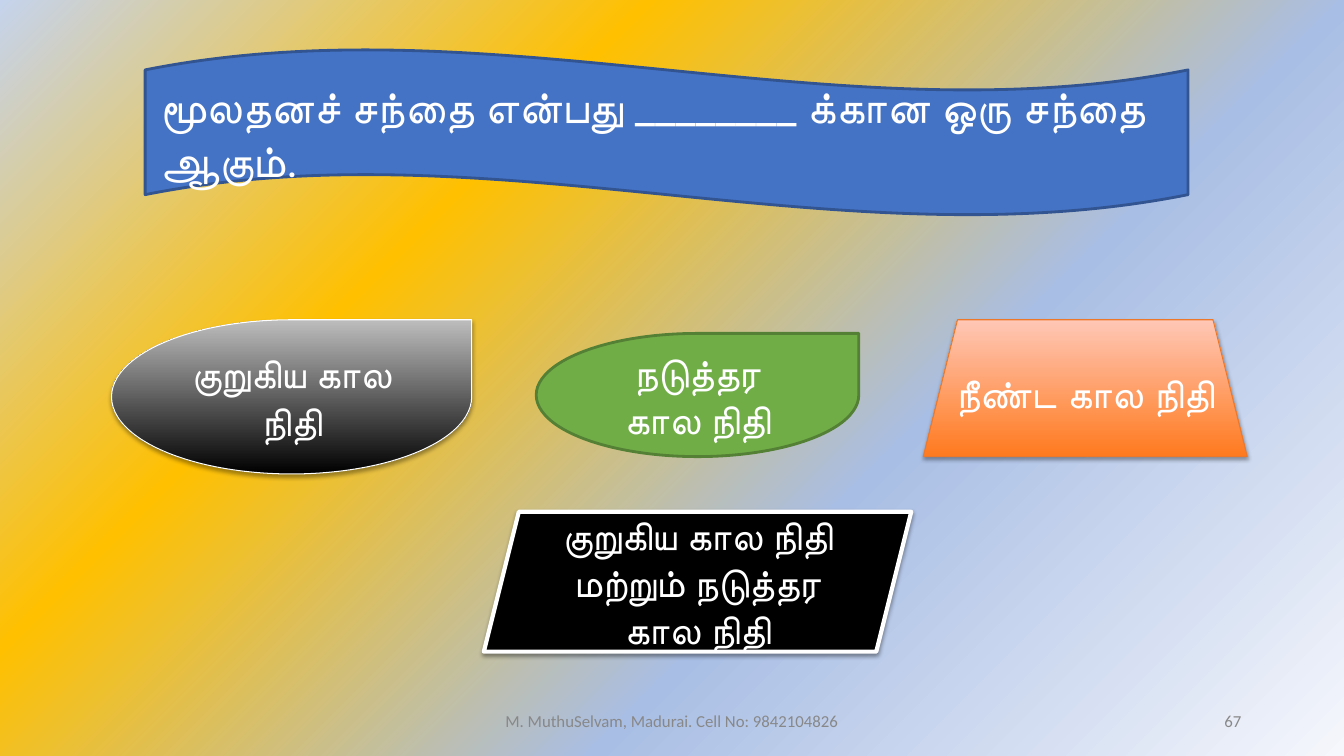
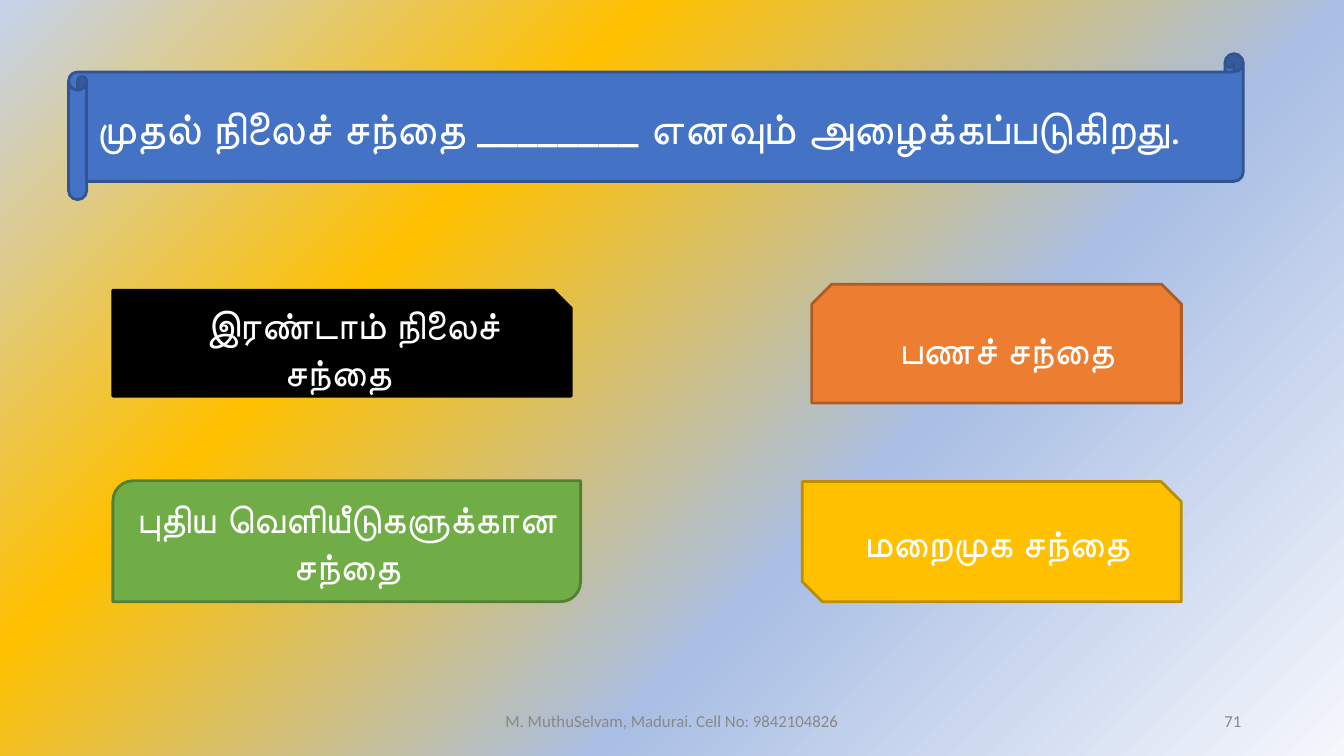
"""Build two quiz slides: a question on a banner above four answer shapes."""
import pptx
import pptx.dml.color
import pptx.enum.shapes
import pptx.enum.text
import pptx.oxml
import pptx.oxml.ns
import pptx.util

MSO = pptx.enum.shapes.MSO_SHAPE
ALIGN = pptx.enum.text.PP_ALIGN
NS = pptx.oxml.ns.nsdecls("a")
WHITE, BLACK, GREY = "FFFFFF", "000000", "888888"
BLUE, GREEN, ORANGE, GOLD = "4472C4", "70AD47", "ED7D31", "FFC000"
BLUE_EDGE, GREEN_EDGE, ORANGE_EDGE, GOLD_EDGE = "325491", "538035", "AF5C24", "BD8E00"
BACKDROP = [(0, "F5F7FC"), (36, "A9BEE4"), (69, GOLD), (100, "C5D3ED")]
FOOTER = "M. MuthuSelvam, Madurai. Cell No: 9842104826"

prs = pptx.Presentation()
prs.slide_width = pptx.util.Inches(13.33)
prs.slide_height = pptx.util.Inches(7.5)


def paint(fill, *hexes):
    """Fill with one colour, or with a gradient from bottom to top."""
    colors = [pptx.dml.color.RGBColor.from_string(h) for h in hexes]
    if len(colors) == 1:
        fill.solid()
        fill.fore_color.rgb = colors[0]
    else:
        fill.gradient()
        fill.gradient_angle = 90
        for stop, color in zip(fill.gradient_stops, colors):
            stop.color.rgb = color


def put(sp, box, text="", size=28, font="Roboto", color=WHITE,
        align=ALIGN.CENTER, bold=False, indent=0):
    """Place a shape by percentages of the slide and write its text."""
    sp.left, sp.width = (int(prs.slide_width * v / 100) for v in box[::2])
    sp.top, sp.height = (int(prs.slide_height * v / 100) for v in box[1::2])
    tf = sp.text_frame
    tf.word_wrap = True
    tf.auto_size = pptx.enum.text.MSO_AUTO_SIZE.NONE
    tf.vertical_anchor = pptx.enum.text.MSO_ANCHOR.MIDDLE
    if text:
        p = tf.paragraphs[0]
        p.alignment = align
        p.line_spacing = 1.0
        if indent:
            p._p.get_or_add_pPr().set("indent", str(pptx.util.Inches(indent)))
        r = p.add_run()
        r.text = text
        r.font.size = pptx.util.Pt(size)
        r.font.name = font
        r.font.bold = bold
        paint(r.font.fill, color)


master = prs.slide_master
master.background.fill.gradient()
grad = master.element.xpath(".//p:bg//a:gradFill")[0]
stops = "".join(f'<a:gs pos="{pos * 1000}"><a:srgbClr val="{color}"/></a:gs>'
                for pos, color in BACKDROP)
grad.getparent().replace(grad, pptx.oxml.parse_xml(
    f'<a:gradFill {NS} rotWithShape="1"><a:gsLst>{stops}</a:gsLst>'
    '<a:path path="circle"><a:fillToRect l="100000" t="100000"/></a:path>'
    '<a:tileRect r="-100000" b="-100000"/></a:gradFill>'))

slides = [
    dict(number="67", banner=MSO.WAVE, box=(10.8, 6.5, 77.6, 22), inset=0.15,
         question="மூலதனச் சந்தை என்பது ________ க்கான ஒரு சந்தை ஆகும்.",
         answers=[
             (MSO.TEAR, (8.3, 42.3, 26.8, 20.4), (BLACK, "BDBDBD"), WHITE, 0.75, 35,
              "குறுகிய கால நிதி", {}),
             (MSO.TRAPEZOID, (68.7, 42.3, 24.1, 18.1), ("FF7A1F", "FFC7B6"), "EC792B", 0.75, 35,
              "நீண்ட கால நிதி", dict(align=ALIGN.LEFT, bold=True)),
             (MSO.PARALLELOGRAM, (36, 67.7, 31.8, 18.5), (BLACK,), WHITE, 3, 38,
              "குறுகிய கால நிதி மற்றும் நடுத்தர கால நிதி", {}),
             (MSO.TEAR, (39.9, 44.1, 24, 16.3), (GREEN,), GREEN_EDGE, 2, 0,
              "நடுத்தர கால நிதி", {}),
         ]),
    dict(number="71", banner=MSO.HORIZONTAL_SCROLL, box=(5.1, 7.1, 87.4, 19.3), inset=0.28,
         question="முதல் நிலைச் சந்தை ________ எனவும் அழைக்கப்படுகிறது.",
         answers=[
             (MSO.SNIP_1_RECTANGLE, (8.4, 38.4, 34.1, 14), (BLACK,), BLACK, 2, 0,
              "இரண்டாம் நிலைச் சந்தை", dict(indent=0.3)),
             (MSO.SNIP_2_SAME_RECTANGLE, (60.4, 37.6, 27.5, 15.7), (ORANGE,), ORANGE_EDGE, 2, 0,
              "பணச் சந்தை", dict(indent=0.2)),
             (MSO.SNIP_2_DIAG_RECTANGLE, (59.7, 63.7, 28.2, 15.9), (GOLD,), GOLD_EDGE, 2, 0,
              "மறைமுக சந்தை", dict(indent=0.1)),
             (MSO.ROUND_2_DIAG_RECTANGLE, (8.4, 63.6, 34.8, 16), (GREEN,), GREEN_EDGE, 2, 0,
              "புதிய வெளியீடுகளுக்கான சந்தை", dict(bold=True)),
         ]),
]

for item in slides:
    s = prs.slides.add_slide(prs.slide_layouts[5])
    title = s.shapes.title
    put(title, item["box"], item["question"], size=32, align=ALIGN.LEFT)
    title.text_frame.margin_left = pptx.util.Inches(item["inset"])
    title.text_frame.margin_right = pptx.util.Inches(item["inset"])

    banner = (item["banner"], item["box"], (BLUE,), BLUE_EDGE, 2, 0, "", {})
    for kind, box, fill, edge, width, shade, text, style in [banner] + item["answers"]:
        sp = s.shapes.add_shape(kind, 0, 0, 0, 0)
        put(sp, box, text, **style)
        paint(sp.fill, *fill)
        paint(sp.line.fill, edge)
        sp.line.width = pptx.util.Pt(width)
        sp.shadow.inherit = False
        if shade:
            sp.element.xpath("./p:spPr/a:effectLst")[0].append(pptx.oxml.parse_xml(
                f'<a:outerShdw {NS} blurRad="{pptx.util.Pt(3.1)}" dist="{pptx.util.Pt(1.8)}"'
                ' dir="5400000" algn="ctr" rotWithShape="0"><a:srgbClr val="000000">'
                f'<a:alpha val="{shade * 1000}"/></a:srgbClr></a:outerShdw>'))
        if not text:
            sp.element.addnext(title.element)

    for box, text, align in [((33.1, 92.7, 33.8, 5.3), FOOTER, ALIGN.CENTER),
                             ((70.6, 92.7, 22.5, 5.3), item["number"], ALIGN.RIGHT)]:
        put(s.shapes.add_textbox(0, 0, 0, 0), box, text, 12, "Calibri", GREY, align)

prs.save("out.pptx")
